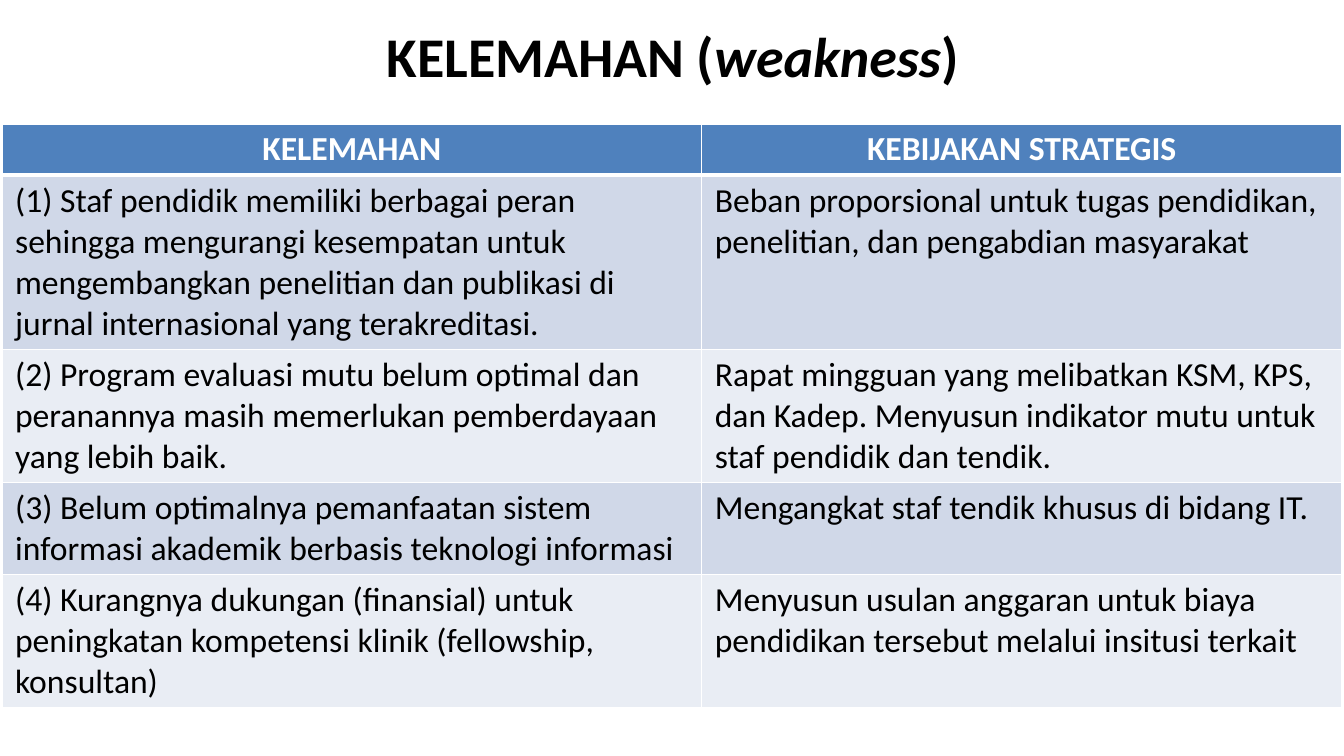
from lxml import etree
from pptx import Presentation
from pptx.dml.color import RGBColor
from pptx.enum.text import MSO_ANCHOR, PP_ALIGN
from pptx.oxml.ns import qn
from pptx.util import Inches, Pt

CENTER, LEFT = PP_ALIGN.CENTER, PP_ALIGN.LEFT
MIDDLE = MSO_ANCHOR.MIDDLE
FONT = "Calibri"
BLACK = RGBColor(0x00, 0x00, 0x00)
WHITE = RGBColor(0xFF, 0xFF, 0xFF)
HEADER_BLUE = RGBColor(0x4F, 0x81, 0xBD)
BANDS = (RGBColor(0xD0, 0xD8, 0xE8), RGBColor(0xE9, 0xED, 0xF4))

HEADINGS = ("KELEMAHAN", "KEBIJAKAN STRATEGIS")
WEAKNESSES = (
    ("(1) Staf pendidik memiliki berbagai peran sehingga mengurangi kesempatan "
     "untuk mengembangkan penelitian dan publikasi di jurnal internasional yang "
     "terakreditasi.",
     "Beban proporsional untuk tugas pendidikan, penelitian, dan pengabdian "
     "masyarakat"),
    ("(2) Program evaluasi mutu belum optimal dan peranannya masih memerlukan "
     "pemberdayaan yang lebih baik.",
     "Rapat mingguan yang melibatkan KSM, KPS, dan Kadep. Menyusun indikator "
     "mutu untuk staf pendidik dan tendik."),
    ("(3) Belum optimalnya pemanfaatan sistem informasi akademik berbasis "
     "teknologi informasi",
     "Mengangkat staf tendik khusus di bidang IT."),
    ("(4) Kurangnya dukungan (finansial) untuk peningkatan kompetensi klinik "
     "(fellowship, konsultan)",
     "Menyusun usulan anggaran untuk biaya pendidikan tersebut melalui insitusi "
     "terkait"),
)
COLUMN_WIDTHS = (6.94, 6.35)
ROW_HEIGHTS = (0.5, 1.73, 1.32, 0.91, 1.32)


def set_font(font, size, color, bold):
    font.name = FONT
    font.size = Pt(size)
    font.bold = bold
    font.color.rgb = color


def add_title(slide, left, top, width, height):
    title = slide.shapes.title
    title.left, title.top = Inches(left), Inches(top)
    title.width, title.height = Inches(width), Inches(height)
    title.text_frame.vertical_anchor = MIDDLE
    heading = title.text_frame.paragraphs[0]
    heading.alignment = CENTER
    set_font(heading.font, 40, BLACK, True)
    for words, italic in (("KELEMAHAN (", False), ("weakness", True), (")", False)):
        run = heading.add_run()
        run.text = words
        run.font.italic = italic


def set_borders(cell, bottom_width, top_width):
    properties = cell._tc.get_or_add_tcPr()
    widths = {"a:lnL": 1, "a:lnR": 1, "a:lnT": top_width, "a:lnB": bottom_width}
    for side, width in widths.items():
        line = etree.SubElement(properties, qn(side), w=str(Pt(width)))
        fill = etree.SubElement(line, qn("a:solidFill"))
        etree.SubElement(fill, qn("a:srgbClr"), val=str(WHITE))


def fill_cell(cell, words, is_header, is_first_row, band):
    set_borders(cell, 3 if is_header else 1, 3 if is_first_row else 1)
    cell.fill.solid()
    cell.fill.fore_color.rgb = band
    cell.margin_left = cell.margin_right = Inches(0.13)
    cell.margin_top = cell.margin_bottom = Inches(0.05)
    cell.text = words
    paragraph = cell.text_frame.paragraphs[0]
    paragraph.alignment = CENTER if is_header else LEFT
    set_font(paragraph.font, 24, WHITE if is_header else BLACK, is_header)


def add_strategy_table(slide, left, top):
    rows = (HEADINGS, *WEAKNESSES)
    table = slide.shapes.add_table(
        len(rows), len(HEADINGS), Inches(left), Inches(top),
        Inches(sum(COLUMN_WIDTHS)), Inches(sum(ROW_HEIGHTS))).table
    for column, width in zip(table.columns, COLUMN_WIDTHS):
        column.width = Inches(width)
    for r, (texts, height) in enumerate(zip(rows, ROW_HEIGHTS)):
        table.rows[r].height = Inches(height)
        band = HEADER_BLUE if r == 0 else BANDS[(r - 1) % 2]
        for c, words in enumerate(texts):
            fill_cell(table.cell(r, c), words, r == 0, r == 1, band)


def main():
    presentation = Presentation()
    presentation.slide_width = Inches(13.33)
    presentation.slide_height = Inches(7.5)
    slide = presentation.slides.add_slide(presentation.slide_layouts[5])
    # Title
    add_title(slide, 0.67, 0.03, 12, 1.03)
    # Weaknesses and the policies that answer them
    add_strategy_table(slide, 0.02, 1.23)
    presentation.save("out.pptx")


if __name__ == "__main__":
    main()
